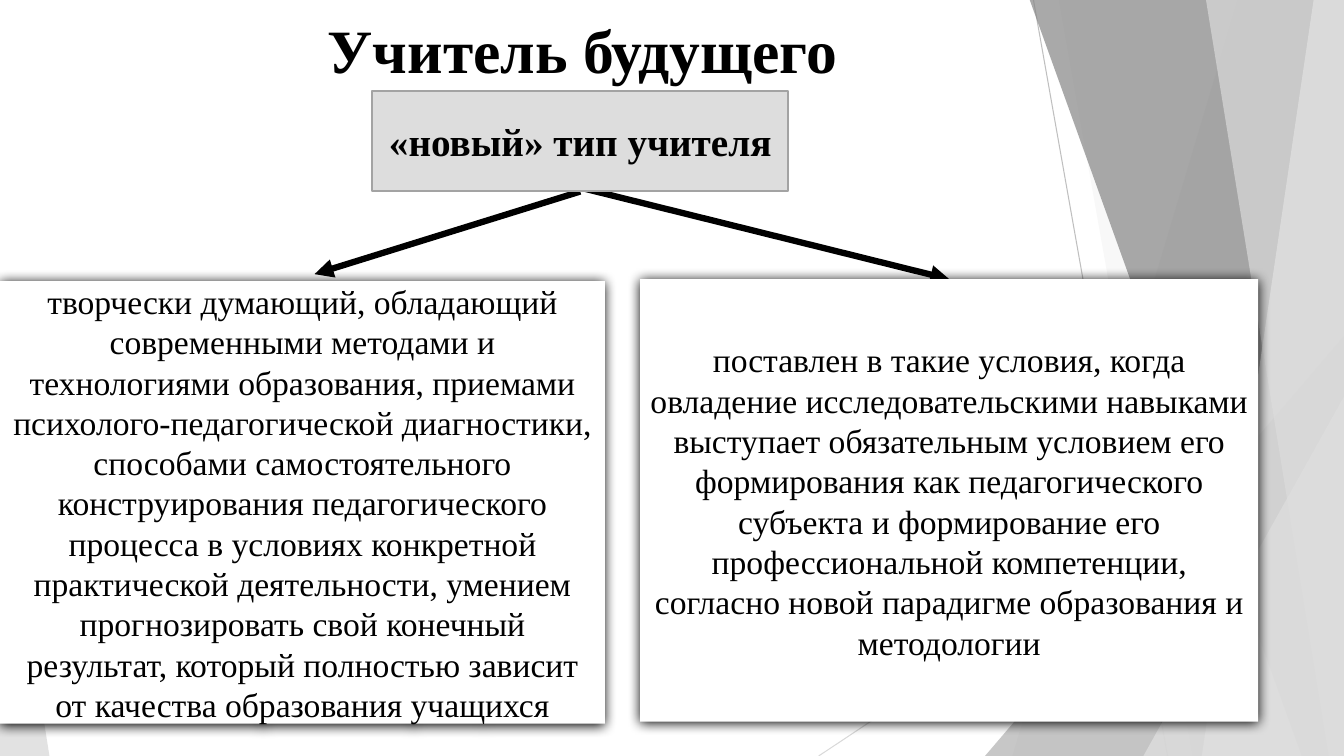
from lxml.etree import SubElement
from pptx import Presentation
from pptx.dml.color import RGBColor
from pptx.enum.shapes import MSO_CONNECTOR, MSO_SHAPE
from pptx.enum.text import MSO_ANCHOR, PP_ALIGN
from pptx.oxml.ns import qn
from pptx.util import Pt

PX = 9144  # 100 px to the inch
WIDE, HIGH = 1333, 750
LINE = MSO_CONNECTOR.STRAIGHT
RECT, PEAK = MSO_SHAPE.RECTANGLE, MSO_SHAPE.ISOSCELES_TRIANGLE
MID, TOP = MSO_ANCHOR.MIDDLE, MSO_ANCHOR.TOP
CENTER = PP_ALIGN.CENTER
BLACK = RGBColor(0, 0, 0)
WHITE = RGBColor(255, 255, 255)
PALE = RGBColor(0xEB, 0xEB, 0xEB)
LIGHT = RGBColor(0xDD, 0xDD, 0xDD)
MIST = RGBColor(0xD9, 0xD9, 0xD9)
SILVER = RGBColor(0xBF, 0xBF, 0xBF)
GRAY = RGBColor(0xB2, 0xB2, 0xB2)
EDGE = RGBColor(0xA3, 0xA3, 0xA3)
DARK = RGBColor(0x85, 0x85, 0x85)

deck = Presentation()
deck.slide_width, deck.slide_height = WIDE * PX, HIGH * PX
slide = deck.slides.add_slide(deck.slide_layouts[5])
shapes = slide.shapes


def draw_line(ends, color, width):
    line = shapes.add_connector(LINE, *[n * PX for n in ends])
    line.line.color.rgb = color
    line.line.width = Pt(width)
    SubElement(line._element.spPr, qn("a:effectLst"))
    return line


def put_text(shape, text, anchor, size, bold):
    frame = shape.text_frame
    frame.word_wrap = True
    frame.vertical_anchor = anchor
    frame.text = text
    par = frame.paragraphs[0]
    par.alignment = CENTER
    style = {"name": "Times New Roman", "size": Pt(size), "bold": bold}
    for key, value in style.items():
        setattr(par.runs[0].font, key, value)
    par.runs[0].font.color.rgb = BLACK


# Background facets
draw_line((1025, 0, 1158, HIGH), SILVER, 0.75)
draw_line((WIDE, 403, 812, HIGH), MIST, 0.75)

# Bands give top and bottom x of the slanted side;
# peaks give left, top, width, height and place of the tip.
facets = [
    ((1228, 1004), LIGHT, 30),
    ((1050, 1183), LIGHT, 20),
    ((977, 333, 356, 417, 1), GRAY, 72),
    ((1021, 1291), DARK, 70),
    ((1303, 1192), PALE, 70),
    ((1196, 1318), LIGHT, 65),
    ((1134, 393, 199, 357, 1), LIGHT, 80),
    ((0, 439, 49, 311, 0), LIGHT, 85),
]
for form, color, alpha in facets:
    if len(form) == 2:
        high, low = form
        band = shapes.build_freeform(high, -1, PX)
        band.add_line_segments([(WIDE, -1), (WIDE, HIGH), (low, HIGH)])
        facet = band.convert_to_shape()
    else:
        *box, tip = form
        facet = shapes.add_shape(PEAK, *[n * PX for n in box])
        facet.adjustments[0] = tip
    facet.fill.solid()
    facet.fill.fore_color.rgb = color
    facet.line.fill.background()
    facet.shadow.inherit = False
    tint = facet._element.spPr.find(".//" + qn("a:srgbClr"))
    SubElement(tint, qn("a:alpha"), val=str(alpha * 1000))

# Title, in front of the facets
title = shapes.title
shapes._spTree.append(title._element)
title.left, title.top, title.width, title.height = [
    n * PX for n in (105, 0, 946, 110)]
put_text(title, "Учитель будущего", TOP, 44, True)
title.text_frame.margin_top = 12 * PX

# Arrows
arrows = []
for ends in [(575, 190, 312, 272), (575, 186, 941, 277)]:
    arrow = draw_line(ends, BLACK, 4.5)
    SubElement(arrow.line._get_or_add_ln(), qn("a:tailEnd"), type="triangle")
    arrows.append(arrow)

# Boxes
boxes = [
    ((369, 90, 413, 100), LIGHT, EDGE, 28, "«новый» тип учителя"),
    ((635, 277, 613, 439), WHITE, None, 24,
     "поставлен в такие условия, когда овладение исследовательскими "
     "навыками выступает обязательным условием его формирования как "
     "педагогического субъекта и формирование его профессиональной "
     "компетенции, согласно новой парадигме образования и методологии"),
    ((0, 279, 600, 439), WHITE, None, 24,
     "творчески думающий, обладающий современными методами и "
     "технологиями образования, приемами психолого-педагогической "
     "диагностики, способами самостоятельного конструирования "
     "педагогического процесса в условиях конкретной практической "
     "деятельности, умением прогнозировать свой конечный результат, "
     "который полностью зависит от качества образования учащихся"),
]
cards = []
for place, fill, edge, size, text in boxes:
    card = shapes.add_shape(RECT, *[n * PX for n in place])
    card.fill.solid()
    card.fill.fore_color.rgb = fill
    card.shadow.inherit = False
    if edge:
        card.line.color.rgb = edge
        card.line.width = Pt(1.5)
    else:
        card.line.fill.background()
        effect = card._element.spPr.find(qn("a:effectLst"))
        shade = SubElement(effect, qn("a:outerShdw"), blurRad=str(Pt(8.5)),
                           dist=str(Pt(1)), dir="5400000", algn="ctr",
                           rotWithShape="0")
        SubElement(shade, qn("a:srgbClr"), val=str(BLACK))
    put_text(card, text, MID, size, bool(edge))
    cards.append(card)

arrows[0].begin_connect(cards[0], 2)
arrows[1].end_connect(cards[1], 0)

deck.save("out.pptx")
